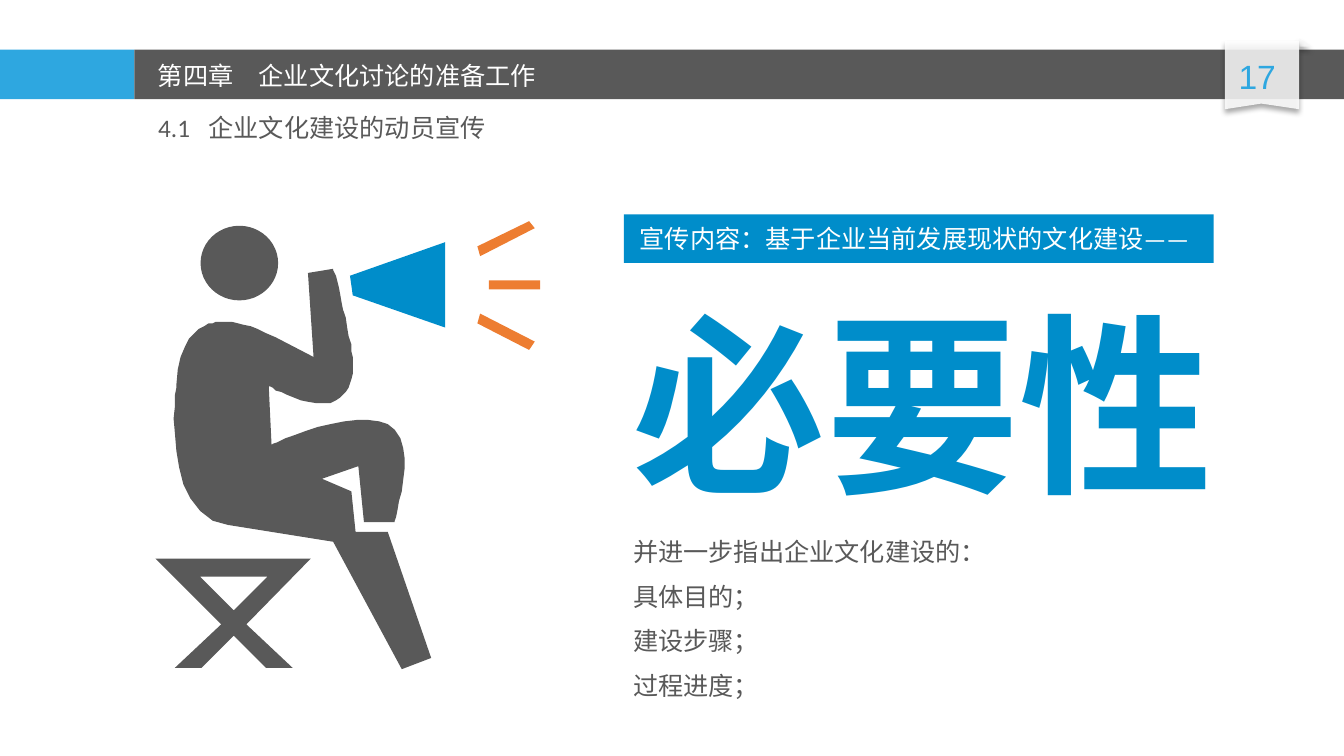
"""Build the slide on announcing and mobilising for corporate culture work."""
from lxml import etree
from pptx import Presentation
from pptx.dml.color import RGBColor
from pptx.enum.shapes import MSO_SHAPE as Shape
from pptx.enum.text import MSO_ANCHOR as Anchor, MSO_AUTO_SIZE as AutoSize, PP_ALIGN as Align
from pptx.oxml.ns import qn
from pptx.util import Pt

BLUE, SKY, GRAY, ORANGE, WHITE = "008DCA", "2EA7E0", "595959", "ED7D31", "FFFFFF"
HAN = "Noto Sans CJK SC"

SECTION = "4.1\t企业文化建设的动员宣传"
CHAPTER = "第四章\t企业文化讨论的准备工作"
PAGE_NUMBER = "17"
BANNER = "宣传内容：基于企业当前发展现状的文化建设——"
KEYWORD = "必要性"
POINTS = ["并进一步指出企业文化建设的：", "具体目的；", "建设步骤；", "过程进度；"]

RIBBON = [(874.8, 28.8), (928.1, 28.8), (928.1, 78.5), (901.4, 74.2), (874.8, 78.5)]
STOOL = [(167, 453.6), (144, 476.6), (125.3, 476.6), (157.7, 445.7), (110.9, 398.9),
         (222.5, 398.9), (176.4, 445.7), (208.8, 476.6), (190.1, 476.6)]
STOOL_GAP = [(190.8, 411.8), (142.6, 411.8), (167, 435.6)]
CONE = [(317.5, 172.8), (317.5, 234), (252, 211), (249.8, 197.3)]
UPPER_RAY = [(381.6, 163.4), (343.4, 182.9), (341.3, 176.4), (378, 157.7)]
RAY_AXIS = 203.6
BODY = [
    (126, 275),
    (129.6, 227.5, 156.2, 230.4, 156.2, 230.4),
    (156.2, 230.4, 169.9, 226.8, 196.6, 241.2),
    (223.9, 254.9), (220.3, 195.1), (238.3, 192.2),
    (238.3, 192.2, 246.2, 221.8, 250.6, 246.2),
    (254.2, 264.2, 252, 280.1, 239.8, 285.8),
    (223.9, 295.2, 192.2, 275.8, 192.2, 275.8),
    (193.7, 317.5),
    (193.7, 317.5, 254.9, 290.2, 277.2, 303.1),
    (300.2, 316.8, 281.5, 373, 281.5, 373),
    (259.9, 373), (256.3, 332.6), (230.4, 342), (251.3, 351.4), (254.2, 380.2),
    (277.2, 380.2), (308.2, 470.2), (286.6, 478.1), (237.6, 386.6), (162.7, 375.1),
    (113, 367.9, 126, 275, 126, 275),
]


def rgb(value):
    return RGBColor.from_string(value)


def flatten(outline, steps=12):
    """Turn lines (x, y) and cubic curves (six numbers) into points."""
    points = []
    for part in outline:
        if len(part) == 2:
            points.append(part)
            continue
        corners = [points[-1], part[:2], part[2:4], part[4:]]
        for step in range(1, steps + 1):
            t = step / steps
            weights = ((1 - t) ** 3, 3 * t * (1 - t) ** 2, 3 * t * t * (1 - t), t ** 3)
            points.append(tuple(sum(w * corner[axis] for w, corner in zip(weights, corners))
                                for axis in (0, 1)))
    return points


def paint(shape, color):
    shape.shadow.inherit = False
    shape.fill.solid()
    shape.fill.fore_color.rgb = rgb(color)
    shape.line.fill.background()
    return shape


def add_preset(slide, kind, box, color):
    return paint(slide.shapes.add_shape(kind, *map(Pt, box)), color)


def add_outline(slide, color, *contours):
    builder = slide.shapes.build_freeform(*contours[0][0], scale=Pt(1))
    builder.add_line_segments(contours[0][1:])
    for contour in contours[1:]:
        builder.move_to(*contour[0])
        builder.add_line_segments(contour[1:])
    return paint(builder.convert_to_shape(), color)


def make_paper(shape):
    """Make the fill slightly transparent and add a soft shadow below."""
    properties = shape._element.spPr
    fill = properties.find(qn("a:solidFill"))[0]
    etree.SubElement(fill, qn("a:alpha"), val="85000")
    effects = properties.find(qn("a:effectLst"))
    shadow = etree.SubElement(effects, qn("a:outerShdw"), blurRad=str(Pt(4)),
                              dist=str(Pt(3)), dir="5400000", rotWithShape="0")
    black = etree.SubElement(shadow, qn("a:srgbClr"), val="000000")
    etree.SubElement(black, qn("a:alpha"), val="40000")


def place(shape, box):
    shape.left, shape.top, shape.width, shape.height = map(Pt, box)
    return shape


def write(shape, lines, size, color, font, bold=False, align=Align.LEFT, anchor=Anchor.TOP,
          wrap=True, tab=None, spacing=None, before=0):
    frame = shape.text_frame
    frame.text = "\n".join(lines)
    frame.word_wrap = wrap
    frame.auto_size = AutoSize.NONE
    frame.vertical_anchor = anchor
    for index, paragraph in enumerate(frame.paragraphs):
        paragraph.alignment = align
        paragraph.space_before = Pt(before if index else 0)
        if spacing:
            paragraph.line_spacing = spacing
        properties = paragraph._p.get_or_add_pPr()
        properties.set("marL", "0")
        properties.set("indent", "0")
        etree.SubElement(properties, qn("a:buNone"))
        if tab:
            tabs = etree.SubElement(properties, qn("a:tabLst"))
            etree.SubElement(tabs, qn("a:tab"), pos=str(Pt(tab)), algn="l")
        paragraph.font.size = Pt(size)
        paragraph.font.bold = bold
        paragraph.font.color.rgb = rgb(color)
        paragraph.font.name = font
        etree.SubElement(properties.find(qn("a:defRPr")), qn("a:ea"), typeface=font)


def add_text(slide, box, *args, **options):
    write(slide.shapes.add_textbox(*map(Pt, box)), *args, **options)


def main():
    presentation = Presentation()
    presentation.slide_width, presentation.slide_height = Pt(960), Pt(540)
    slide = presentation.slides.add_slide(presentation.slide_layouts[1])
    title, body = slide.placeholders

    add_preset(slide, Shape.RECTANGLE, (0, 35.5, 96, 35.3), SKY)
    add_preset(slide, Shape.RECTANGLE, (96, 35.5, 864, 35.3), GRAY)
    make_paper(add_preset(slide, Shape.RIGHT_TRIANGLE, (928.1, 27.4, 8.6, 5.8), "F8F8F8"))
    make_paper(add_outline(slide, WHITE, RIBBON))
    add_text(slide, (871.4, 36.7, 53.3, 36), [PAGE_NUMBER], 24, SKY, "Arial", align=Align.CENTER)
    add_text(slide, (105.8, 39.6, 363, 28.8), [CHAPTER], 18, WHITE, HAN, tab=70.4)
    write(place(title, (105.8, 76.3, 382, 28.8)), [SECTION], 18, GRAY, "Calibri", tab=35.5)

    add_outline(slide, GRAY, STOOL, STOOL_GAP)
    add_preset(slide, Shape.OVAL, (143.3, 161.3, 55.4, 53.3), GRAY)
    add_outline(slide, GRAY, flatten(BODY))
    add_outline(slide, BLUE, CONE)
    add_outline(slide, ORANGE, UPPER_RAY)
    add_preset(slide, Shape.RECTANGLE, (349.2, 200.2, 36.7, 6.5), ORANGE)
    add_outline(slide, ORANGE, [(x, 2 * RAY_AXIS - y) for x, y in UPPER_RAY])

    banner = add_preset(slide, Shape.RECTANGLE, (445.7, 153.2, 421.2, 34.6), BLUE)
    write(banner, [BANNER], 18, WHITE, "Calibri", anchor=Anchor.MIDDLE)
    banner.text_frame.margin_left = Pt(11.2)
    add_text(slide, (445, 200.2, 428.4, 172.8), [KEYWORD], 138, BLUE, "Calibri",
             bold=True, wrap=False)
    write(place(body, (445, 375.1, 466.6, 128.9)), POINTS, 18, GRAY, HAN, spacing=1.2, before=6)
    presentation.save("out.pptx")


if __name__ == "__main__":
    main()
